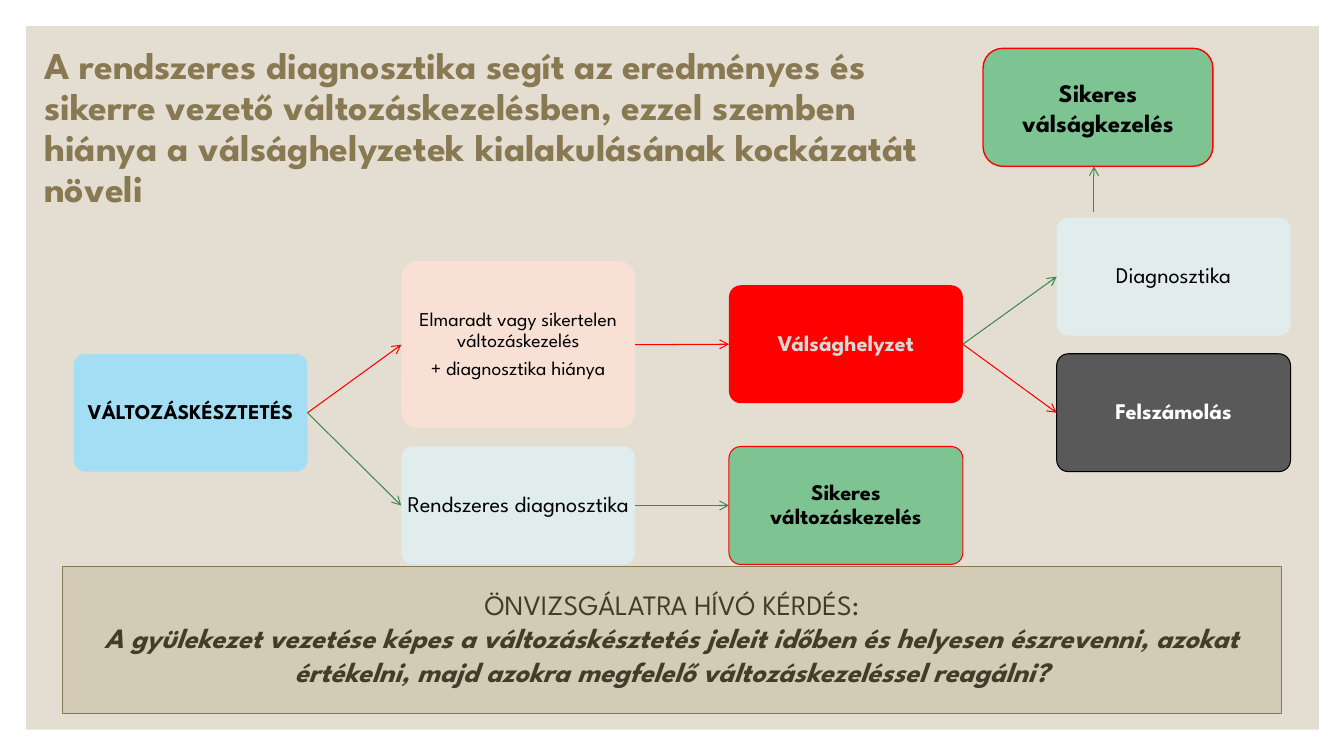
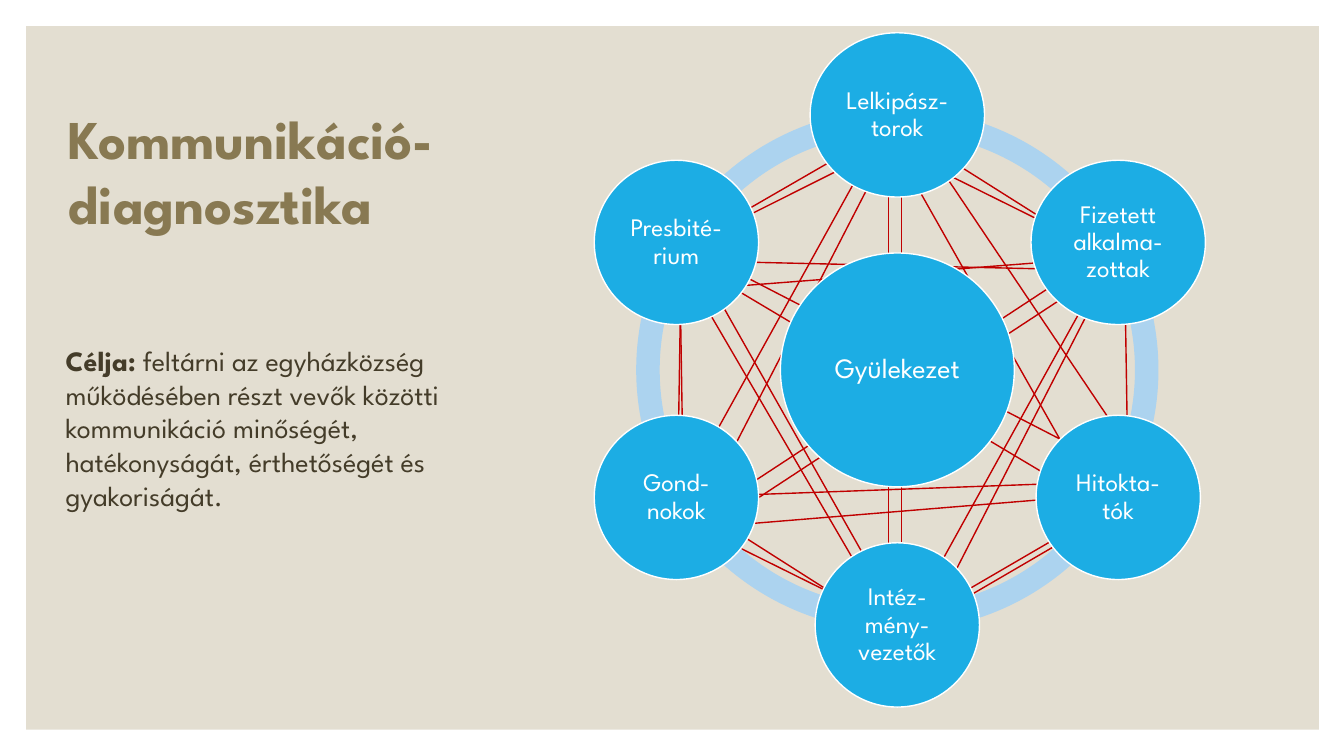
from dataclasses import dataclass
from math import cos, hypot, radians, sin

from lxml import etree
from pptx import Presentation
from pptx.dml.color import RGBColor
from pptx.enum.shapes import MSO_CONNECTOR, MSO_SHAPE
from pptx.enum.text import MSO_ANCHOR, PP_ALIGN
from pptx.oxml.ns import qn
from pptx.util import Emu, Pt

RECT, ROUND = MSO_SHAPE.RECTANGLE, MSO_SHAPE.ROUNDED_RECTANGLE
OVAL, DONUT = MSO_SHAPE.OVAL, MSO_SHAPE.DONUT
STRAIGHT = MSO_CONNECTOR.STRAIGHT
LEFT, CENTER = PP_ALIGN.LEFT, PP_ALIGN.CENTER
TOP, MIDDLE = MSO_ANCHOR.TOP, MSO_ANCHOR.MIDDLE


@dataclass(frozen=True)
class Theme:
    font: str = "League Spartan"
    # Colours
    white: str = "FFFFFF"
    black: str = "000000"
    panel: str = "E3DED1"
    gold: str = "887952"
    brown: str = "443C29"
    sand: str = "D3CBB6"
    sky: str = "A4DEF4"
    peach: str = "F8E0D4"
    mist: str = "E0EDEC"
    mint: str = "7EC492"
    red: str = "FF0000"
    green: str = "3E8853"
    slate: str = "595959"
    pale: str = "D9D9D9"
    blue: str = "1CADE4"
    ring: str = "ACD3EF"
    web: str = "C00000"
    # Type sizes and line widths in points
    head: int = 27
    title: int = 39
    body: int = 20
    node: int = 18
    step: int = 16
    note: int = 14
    cap: int = 15
    thin: float = 0.75
    line: float = 1


T = Theme()


@dataclass(frozen=True)
class Role:
    text: str
    wide: int
    # Sideways drift in px (at start, at end) of the links that come in from
    # the other roles, clockwise from the next one
    drifts: tuple


# Clockwise from the top of the ring
ROLES = [
    Role("Lelkipász-torok", 173,
         ((-20, -10), (-22, -18), (-9, -9), (3, -5), (7, 7))),
    Role("Fizetett alkalma-zottak", 173,
         ((10, 6), (27, 5), (45, 16), (48, 14), (31, 15))),
    Role("Hitokta-tók", 163,
         ((11, 10), (0, -16), (-1, -25), (-6, -36), (-16, -29))),
    Role("Intéz-mény-vezetők", 163,
         ((-3, 8), (-9, -5), (-4, -4), (0, -8), (-4, -5))),
    Role("Gond-nokok", 163,
         ((-3, -7), (-7, -28), (0, -29), (4, -32), (-1, -17))),
    Role("Presbité-rium", 163,
         ((-23, -8), (-28, -18), (-17, -10), (-5, -7), (1, 5))),
]


def px(n):
    return Emu(round(n * 9144))


def rgb(code):
    return RGBColor.from_string(code)


# Text: each paragraph is a list of runs (text, bold, italic)
def write(shape, paras, size, color, align=LEFT, anchor=TOP,
          inset=(10, 5, 10, 5), space=1.0, after=0):
    frame = shape.text_frame
    frame.word_wrap = True
    frame.vertical_anchor = anchor
    (frame.margin_left, frame.margin_top,
     frame.margin_right, frame.margin_bottom) = map(px, inset)
    for i, runs in enumerate(paras):
        para = frame.add_paragraph() if i else frame.paragraphs[0]
        para.alignment = align
        para.line_spacing = space
        para.space_after = Pt(after if i < len(paras) - 1 else 0)
        for text, bold, slant in runs:
            run = para.add_run()
            run.text = text
            font = run.font
            font.name, font.size = T.font, Pt(size)
            font.bold, font.italic = bold, slant
            font.color.rgb = rgb(color)


def label(slide, box, paras, size, color, **style):
    write(slide.shapes.add_textbox(*map(px, box)), paras, size, color, **style)


def block(slide, kind, box, fill, edge=None, width=T.thin, adj=None):
    shape = slide.shapes.add_shape(kind, *map(px, box))
    shape.shadow.inherit = False
    shape.fill.solid()
    shape.fill.fore_color.rgb = rgb(fill)
    if edge:
        shape.line.color.rgb = rgb(edge)
        shape.line.width = Pt(width)
    else:
        shape.line.fill.background()
    if adj is not None:
        shape.adjustments[0] = adj
    return shape


def link(slide, start, end, color, width=T.thin, arrow=False):
    line = slide.shapes.add_connector(STRAIGHT, *map(px, (*start, *end)))
    line.line.color.rgb = rgb(color)
    line.line.width = Pt(width)
    if arrow:
        stroke = line._element.spPr.find(qn("a:ln"))
        etree.SubElement(stroke, qn("a:tailEnd"), type="arrow")
    etree.SubElement(line._element.spPr, qn("a:effectLst"))


# Flow step: rounded box with centred text
def step(slide, box, texts, fill, size=T.step, color=T.black, bold=False,
         edge=None):
    shape = block(slide, ROUND, box, fill, edge, adj=0.1)
    write(shape, [[(text, bold, False)] for text in texts], size, color,
          CENTER, MIDDLE, (1, 1, 1, 1), space=0.9, after=5)
    return box


# Arrow from the right side of one box to the left side of the next
def join(slide, a, b, color):
    link(slide, (a[0] + a[2], a[1] + a[3] / 2), (b[0], b[1] + b[3] / 2),
         color, arrow=True)


# Round node, placed by its centre
def node(slide, spot, wide, high, text, size):
    box = (spot[0] - wide / 2, spot[1] - high / 2, wide, high)
    shape = block(slide, OVAL, box, T.blue, T.white, T.line)
    write(shape, [[(text, False, False)]], size, T.white, CENTER, MIDDLE,
          (3, 3, 3, 3), space=0.9)


# Link between two centres, each end moved square to the line by its drift
def thread(slide, start, end, drift):
    dx, dy = end[0] - start[0], end[1] - start[1]
    span = hypot(dx, dy)
    ends = [(x - dy / span * move, y + dx / span * move)
            for (x, y), move in zip((start, end), drift)]
    link(slide, *ends, T.web, T.line)


# Every role is linked to each of the others, once each way
def weave(slide, spots):
    count = len(spots)
    for i, role in enumerate(ROLES):
        for gap, drift in enumerate(role.drifts, 1):
            thread(slide, spots[(i + gap) % count], spots[i], drift)


# Shared base: white page with a sand panel
def page(deck):
    slide = deck.slides.add_slide(deck.slide_layouts[6])
    block(slide, RECT, (26, 26, 1282, 698), T.panel)
    return slide


def flow(deck):
    slide = page(deck)
    wide, high = 232, 117
    first, second, third, fourth = (73 + 325 * i for i in range(4))
    # Steps
    urge = step(slide, (first, 351, wide, high), ["VÁLTOZÁSKÉSZTETÉS"],
                T.sky, T.cap, bold=True)
    miss = step(slide, (second, 259, wide, 166),
                ["Elmaradt vagy sikertelen változáskezelés",
                 "+ diagnosztika hiánya"], T.peach, T.note)
    check = step(slide, (second, 443, wide, high),
                 ["Rendszeres diagnosztika"], T.mist)
    risk = step(slide, (third, 283, wide, high), ["Válsághelyzet"], T.red,
                color=T.pale, bold=True)
    win = step(slide, (third, 443, wide, high),
               ["Sikeres változáskezelés"], T.mint, bold=True, edge=T.red)
    test = step(slide, (fourth, 216, wide, high), ["Diagnosztika"], T.mist)
    close = step(slide, (fourth, 351, wide, high), ["Felszámolás"], T.slate,
                 color=T.white, bold=True, edge=T.black)
    # Arrows
    for a, b, color in [(urge, miss, T.red), (urge, check, T.green),
                        (miss, risk, T.red), (check, win, T.green),
                        (risk, test, T.green), (risk, close, T.red)]:
        join(slide, a, b, color)
    # Way out of the crisis
    goal = block(slide, ROUND, (975, 48, 228, high), T.mint, T.red, T.line)
    write(goal, [[("Sikeres válságkezelés", True, False)]], T.node, T.black,
          CENTER, MIDDLE)
    link(slide, (1085, 210), (1085, 165), T.green, arrow=True)
    # Title and question
    label(slide, (34, 42, 889, 186),
          [[("A rendszeres diagnosztika segít az eredményes és sikerre vezető "
             "változáskezelésben, ezzel szemben hiánya a válsághelyzetek "
             "kialakulásának kockázatát növeli", True, False)]],
          T.head, T.gold, space=0.9)
    ask = block(slide, RECT, (62, 562, 1209, 146), T.sand, T.gold)
    write(ask, [[("ÖNVIZSGÁLATRA HÍVÓ KÉRDÉS:", False, False)],
                [("A gyülekezet vezetése képes a változáskésztetés jeleit "
                  "időben és helyesen észrevenni, azokat értékelni, majd "
                  "azokra megfelelő változáskezeléssel reagálni?",
                  True, True)]],
          T.body, T.brown, CENTER, MIDDLE, (28, 0, 28, 5))


def talk(deck):
    slide = page(deck)
    # Title
    label(slide, (58, 99, 482, 217),
          [[("Kommunikáció-", True, False)], [("diagnosztika", True, False)]],
          T.title, T.gold)
    # Links, ring and nodes, all around one centre
    x, y, reach, ring = 890, 367, 253, 518
    turns = [radians(360 / len(ROLES) * i - 90) for i in range(len(ROLES))]
    spots = [(x + reach * cos(a), y + reach * sin(a)) for a in turns]
    weave(slide, spots)
    block(slide, DONUT, (x - ring / 2, y - ring / 2, ring, ring), T.ring,
          adj=0.045)
    node(slide, (x, y), 232, 232, "Gyülekezet", T.body)
    for role, spot in zip(ROLES, spots):
        node(slide, spot, role.wide, 163, role.text, T.node)
    # Aim
    label(slide, (65, 341, 419, 168),
          [[("Célja:", True, False),
            (" feltárni az egyházközség működésében részt vevők közötti "
             "kommunikáció minőségét, hatékonyságát, érthetőségét és "
             "gyakoriságát.", False, False)]],
          T.body, T.brown, inset=(0, 0, 0, 0))


def main():
    deck = Presentation()
    deck.slide_width, deck.slide_height = px(1333), px(750)
    flow(deck)
    talk(deck)
    deck.save("out.pptx")


if __name__ == "__main__":
    main()
